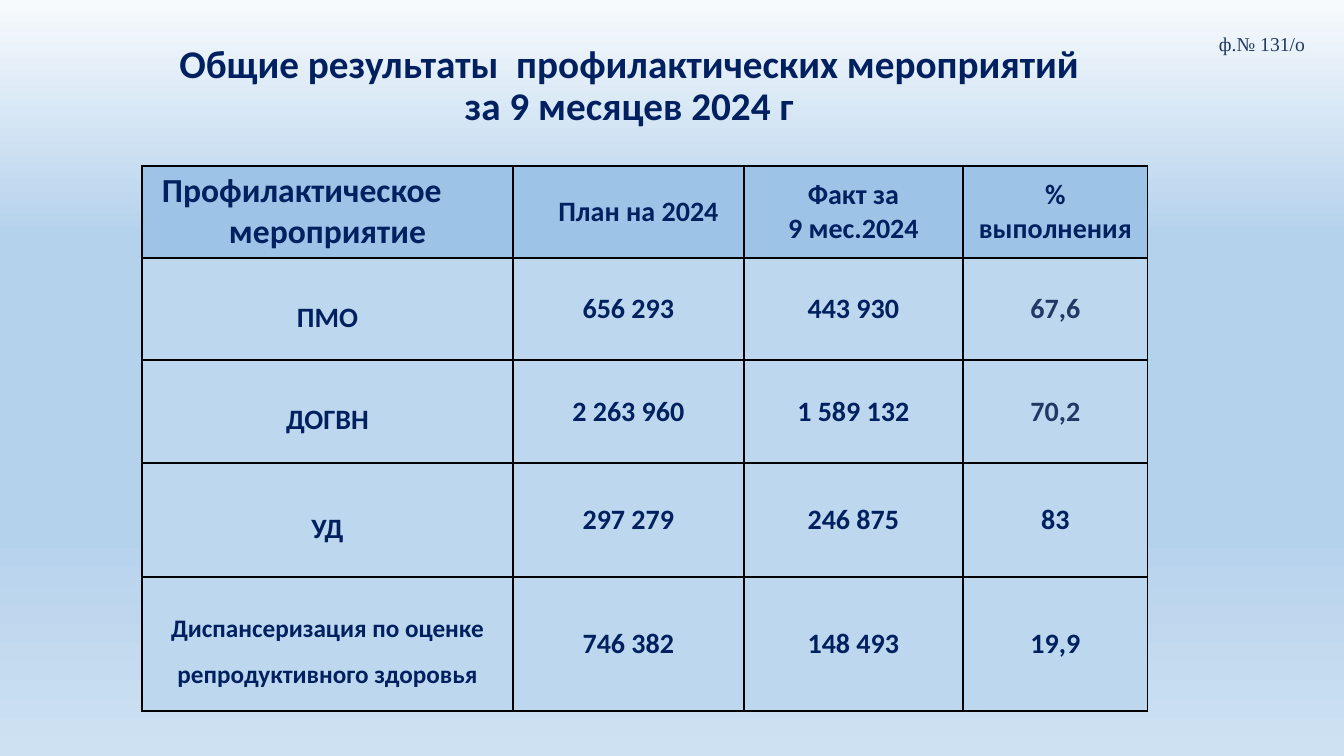
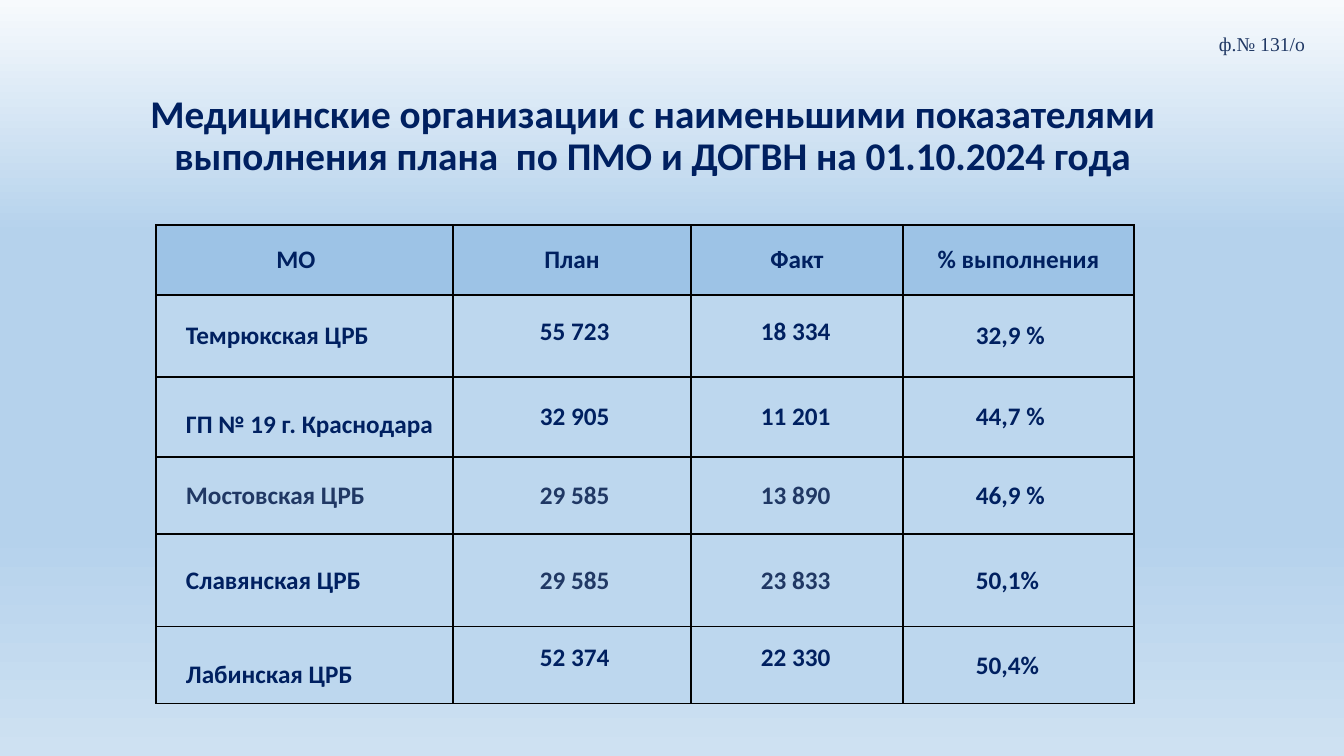
from dataclasses import dataclass

from lxml.etree import SubElement
from pptx import Presentation
from pptx.dml.color import RGBColor
from pptx.enum.text import MSO_ANCHOR, MSO_AUTO_SIZE, PP_ALIGN
from pptx.oxml.ns import qn
from pptx.util import Emu, Pt

# Shared look
NAVY = RGBColor(0x00, 0x20, 0x60)
SLATE = RGBColor(0x20, 0x38, 0x64)
BLACK = RGBColor(0x00, 0x00, 0x00)
HEAD_FILL = RGBColor(0x9D, 0xC3, 0xE6)
BODY_FILL = RGBColor(0xBD, 0xD7, 0xEE)
SKY = RGBColor(0xB5, 0xD2, 0xEC)
BACKGROUND = [(0, RGBColor(0xF7, 0xFA, 0xFD)), (31, SKY), (70, SKY),
              (100, RGBColor(0xCE, 0xE1, 0xF2))]
FONT = "Calibri"
FORM_FONT = "Times New Roman"
CELL_PAD = 10


def px(n):
    return Emu(round(n * 914400 / 100.8))


@dataclass
class Cell:
    """Table cell; shift moves the text down (+) or up (-) from the middle."""
    text: str
    size: int = 20
    color: RGBColor = NAVY
    align: PP_ALIGN = PP_ALIGN.CENTER
    spacing: float = 1.0
    left: int = CELL_PAD
    right: int = CELL_PAD
    shift: int = 0
    indents: tuple = ()


def add_run(p, text, size, color, font=FONT, bold=True):
    r = p.add_run()
    r.text = text
    r.font.name, r.font.size, r.font.bold = font, Pt(size), bold
    r.font.color.rgb = color


def set_background(master):
    fill = master.background.fill
    fill.gradient()
    fill.gradient_angle = 270
    stops = master.element.find(".//" + qn("a:gsLst"))
    for stop in list(stops):
        stops.remove(stop)
    for pos, color in BACKGROUND:
        stop = SubElement(stops, qn("a:gs"), pos=str(pos * 1000))
        SubElement(stop, qn("a:srgbClr"), val=str(color))


def set_title(s, lines, x, y, w, h):
    sp = s.shapes.title
    sp.left, sp.top, sp.width, sp.height = px(x), px(y), px(w), px(h)
    tf = sp.text_frame
    tf.word_wrap = True
    tf.auto_size = MSO_AUTO_SIZE.NONE
    tf.vertical_anchor = MSO_ANCHOR.MIDDLE
    p = tf.paragraphs[0]
    p.alignment = PP_ALIGN.CENTER
    p.line_spacing = 0.9
    for i, line in enumerate(lines):
        if i:
            p.add_line_break()
        add_run(p, line, 28, NAVY)


def add_form_number(s):
    tf = s.shapes.add_textbox(px(1208), px(27), px(108), px(34)).text_frame
    tf.word_wrap = True
    p = tf.paragraphs[0]
    p.alignment = PP_ALIGN.CENTER
    add_run(p, "ф.№ 131/о", 14, SLATE, FORM_FONT, False)


def add_borders(cell):
    tc_pr = cell._tc.get_or_add_tcPr()
    for side in ("a:lnL", "a:lnR", "a:lnT", "a:lnB"):
        ln = SubElement(tc_pr, qn(side), w=str(Pt(1)))
        fill = SubElement(ln, qn("a:solidFill"))
        SubElement(fill, qn("a:srgbClr"), val=str(BLACK))


def fill_cell(cell, item, fill):
    add_borders(cell)
    cell.fill.solid()
    cell.fill.fore_color.rgb = fill
    cell.vertical_anchor = MSO_ANCHOR.MIDDLE
    cell.margin_left, cell.margin_right = px(item.left), px(item.right)
    cell.margin_top = px(max(2 * item.shift, 0))
    cell.margin_bottom = px(max(-2 * item.shift, 0))
    tf = cell.text_frame
    for i, line in enumerate(item.text.split("\n")):
        p = tf.add_paragraph() if i else tf.paragraphs[0]
        p.alignment = item.align
        p.line_spacing = item.spacing
        if item.indents:
            p._p.get_or_add_pPr().set("marL", str(px(item.indents[i])))
        add_run(p, line, item.size, item.color)


def add_grid(s, x, y, widths, heights, rows):
    table = s.shapes.add_table(len(heights), len(widths), px(x), px(y),
                               px(sum(widths)), px(sum(heights))).table
    table.first_row = table.horz_banding = False
    for col, w in zip(table.columns, widths):
        col.width = px(w)
    for row, h in zip(table.rows, heights):
        row.height = px(h)
    for i, row in enumerate(rows):
        for j, item in enumerate(row):
            fill_cell(table.cell(i, j), item, BODY_FILL if i else HEAD_FILL)


def add_slide(prs, title, title_box):
    s = prs.slides.add_slide(prs.slide_layouts[5])
    set_title(s, title, *title_box)
    add_form_number(s)
    return s


def overall_results(prs):
    s = add_slide(prs, ["Общие результаты  профилактических мероприятий",
                        "за 9 месяцев 2024 г"], (37, 27, 1184, 120))
    header = [
        Cell("Профилактическое\nмероприятие", 24, align=PP_ALIGN.LEFT,
             indents=(10, 77)),
        Cell("План на 2024", left=CELL_PAD + 20),
        Cell("Факт за\n9 мес.2024"),
        Cell("% выполнения"),
    ]
    # Activity, its text size, plan, fact, percent and percent colour
    data = [
        ("ПМО", 20, "656 293", "443 930", "67,6", SLATE),
        ("ДОГВН", 20, "2 263 960", "1 589 132", "70,2", SLATE),
        ("УД", 20, "297 279", "246 875", "83", NAVY),
        ("Диспансеризация по оценке репродуктивного здоровья", 18,
         "746 382", "148 493", "19,9", NAVY),
    ]
    rows = [[Cell(name, size, spacing=1.5), Cell(plan), Cell(fact),
             Cell(percent, color=color)]
            for name, size, plan, fact, percent, color in data]
    add_grid(s, 142, 166, (371, 231, 219, 185), (92, 102, 103, 114, 134),
             [header] + rows)


def lowest_results(prs):
    s = add_slide(prs, ["Медицинские организации с наименьшими показателями "
                        "выполнения плана  по ПМО и ДОГВН на 01.10.2024 года"],
                  (130, 60, 1045, 154))
    header = [Cell("МО", 18, right=CELL_PAD + 17)]
    header += [Cell(text, 18) for text in ("План", "Факт", "% выполнения")]
    # Texts, slate-coloured columns, shift of the name and of the values
    data = [
        (("Темрюкская ЦРБ", "55 723", "18 334", "32,9 %"), (), 0, -4),
        (("ГП № 19 г. Краснодара", "32 905", "11 201", "44,7 %"), (), 8, 0),
        (("Мостовская ЦРБ", "29 585", "13 890", "46,9 %"), (0, 1, 2), 0, 0),
        (("Славянская ЦРБ", "29 585", "23 833", "50,1%"), (1, 2), 0, 0),
        (("Лабинская ЦРБ", "52 374", "22 330", "50,4%"), (), 9, -8),
    ]
    lefts = (30, 87, 70, 73)
    rows = []
    for texts, slate, name_shift, value_shift in data:
        shifts = (name_shift, value_shift, value_shift, 0)
        rows.append([
            Cell(text, 18, SLATE if j in slate else NAVY, PP_ALIGN.LEFT,
                 left=lefts[j], right=1, shift=shifts[j])
            for j, text in enumerate(texts)])
    add_grid(s, 156, 225, (297, 238, 212, 231), (70, 82, 80, 77, 93, 77),
             [header] + rows)


def main():
    prs = Presentation()
    prs.slide_width, prs.slide_height = px(1344), px(756)
    set_background(prs.slide_master)
    overall_results(prs)
    lowest_results(prs)
    prs.save("out.pptx")


if __name__ == "__main__":
    main()
